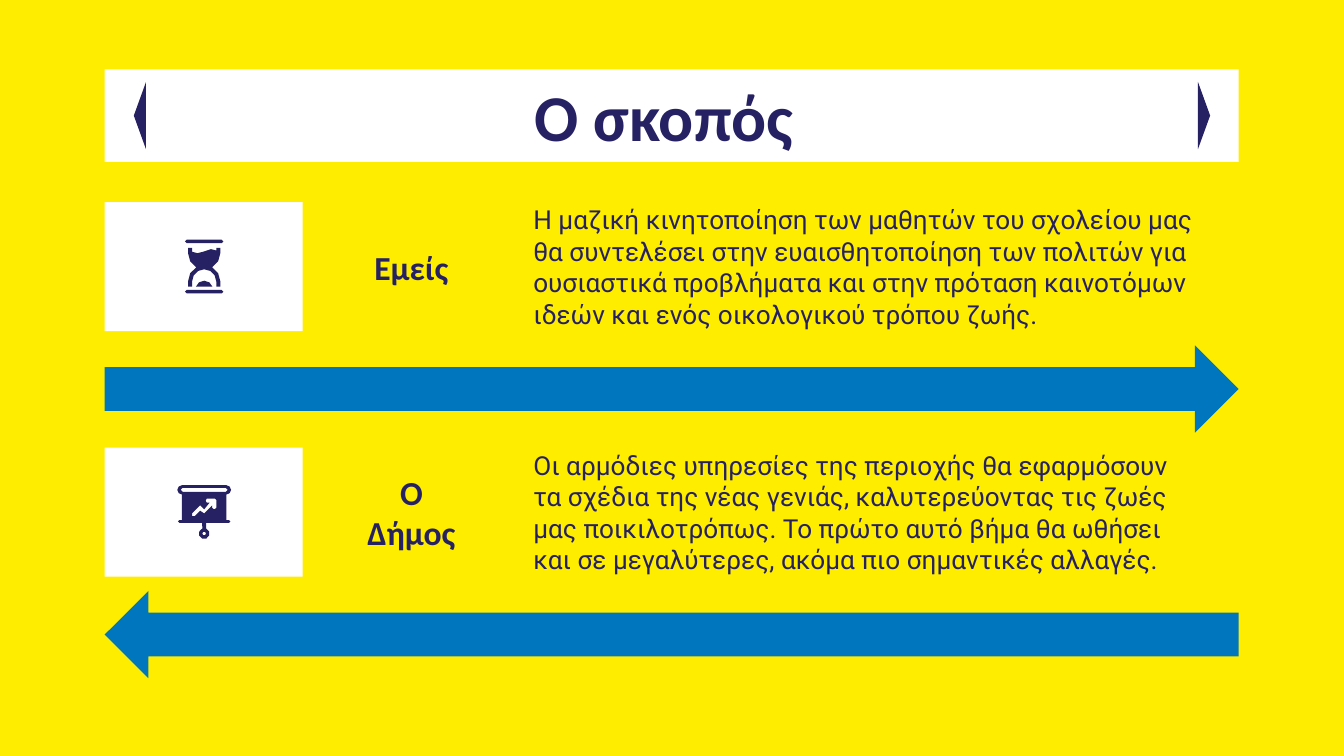
from math import cos, radians, sin

from pptx import Presentation
from pptx.dml.color import RGBColor
from pptx.enum import shapes as kinds, text as txt
from pptx.util import Cm, Pt

HUE = {"back": "FFED00", "ink": "262162", "card": "FFFFFF", "arrow": "0076BE"}
TITLE = "Ο σκοπός "
ROWS = [
    ("Εμείς",
     "Η μαζική κινητοποίηση των μαθητών του σχολείου μας θα συντελέσει στην "
     "ευαισθητοποίηση των πολιτών για ουσιαστικά προβλήματα και στην πρόταση "
     "καινοτόμων ιδεών και ενός οικολογικού τρόπου ζωής."),
    ("Ο Δήμος",
     "Οι αρμόδιες υπηρεσίες της περιοχής θα εφαρμόσουν τα σχέδια της νέας "
     "γενιάς, καλυτερεύοντας τις ζωές μας ποικιλοτρόπως. Το πρώτο αυτό βήμα "
     "θα ωθήσει και σε μεγαλύτερες, ακόμα πιο σημαντικές αλλαγές."),
]


def arc(x, y, r, start, end, steps=2):
    """Points along an arc; angles in degrees, clockwise from the right."""
    turns = [radians(start + (end - start) * i / steps) for i in range(steps + 1)]
    return [(x + r * cos(a), y + r * sin(a)) for a in turns]


def pill(x, y, r):
    """A bar with round ends centred at -x and x."""
    return arc(-x, y, r, 90, 270) + arc(x, y, r, 270, 450)


# Icon outlines, in hundredths of an inch around the icon's middle.
# Each icon is a list of parts; each part is a list of contours.
GLASS = (
    [(9, -14), (9, -12), (5, -13), (-1, -11), (-5, -10), (-9, -11),
     (-9, -14), (-12, -14)]
    + arc(0, -10, 12, 180, 120) + arc(0, 11, 12, 240, 180)
    + [(-12, 15), (-9, 15)] + arc(0, 11, 9, 180, 360, 6) + [(9, 15), (12, 15)]
    + arc(0, 11, 12, 360, 300) + arc(0, -10, 12, 60, 0) + [(12, -14)]
)
SAND = arc(0, 17, 6.5, 198, 342, 4)
BOARD = (
    arc(-16.5, -16.5, 3.5, 90, 270, 4) + arc(16.5, -16.5, 3.5, 270, 450, 4)
    + [(16.5, 6)] + arc(18.5, 7, 1, 270, 450) + [(1.5, 8)]
    + arc(0, 16, 4, -70, 250, 7) + [(-1.5, 8)]
    + arc(-18.5, 7, 1, 90, 270) + [(-16.5, 6)]
)
TREND = [(2, -10), (8, -10), (9, -9), (9, -3), (7.5, -2), (6, -3), (6, -5),
         (0, 1), (-3, -1), (-7, 3), (-9, 3), (-9, 1),
         (-3, -5), (0, -2), (4, -7), (2, -7), (1, -8.5)]
GLASS_ICON = [[SAND], [GLASS], [pill(13, 18.7, 1.3)], [pill(13, -18.7, 1.3)]]
BOARD_ICON = [[BOARD, pill(16, -16.5, 1.5), arc(0, 16, 1.4, 0, 300, 5), TREND]]

deck = Presentation()
deck.slide_width, deck.slide_height = Cm(25.4), Cm(14.29)
slide = deck.slides.add_slide(deck.slide_layouts[6])
slide.background.fill.solid()
slide.background.fill.fore_color.rgb = RGBColor.from_string(HUE["back"])


def paint(shape, hue):
    shape.shadow.inherit = False
    shape.fill.solid()
    shape.fill.fore_color.rgb = RGBColor.from_string(HUE[hue])
    shape.line.fill.background()


def block(kind, box, hue, turn=0):
    shape = slide.shapes.add_shape(kind, *map(Cm, box))
    shape.rotation = turn
    paint(shape, hue)
    return shape


def write(shape, words, size, font, bold=False, mid=True, after=0):
    frame = shape.text_frame
    frame.word_wrap = True
    frame.vertical_anchor = txt.MSO_ANCHOR.MIDDLE
    frame.margin_left = frame.margin_right = Cm(0.25)
    frame.margin_top = frame.margin_bottom = Cm(0.25)
    para = frame.paragraphs[0]
    para.alignment = txt.PP_ALIGN.CENTER if mid else txt.PP_ALIGN.LEFT
    para.space_after = Pt(after)
    run = para.add_run()
    run.text = words
    run.font.size, run.font.name, run.font.bold = Pt(size), font, bold
    run.font.color.rgb = RGBColor.from_string(HUE["ink"])


def draw(icon, x, y):
    home = slide.shapes.add_group_shape().shapes if len(icon) > 1 else slide.shapes
    for part in icon:
        pen = None
        for line in part:
            dots = [(px * 100, py * 100) for px, py in line]
            if pen is None:
                pen = home.build_freeform(*dots[0], scale=Cm(0.0254) / 100)
            else:
                pen.move_to(*dots[0])
            pen.add_line_segments(dots[1:], close=True)
        paint(pen.convert_to_shape(Cm(x), Cm(y)), "ink")


KIND = kinds.MSO_SHAPE
LEFT, WIDE = 1.98, 21.43
CARD_W, CARD_H = 3.74, 2.44
TOPS = [3.82 + 4.64 * i for i in range(len(ROWS))]


def tell(row, top):
    """The text and the label of one row."""
    name, words = row
    body = slide.shapes.add_textbox(Cm(9.83), Cm(top), Cm(12.98), Cm(CARD_H))
    write(body, words, 14, "Roboto", mid=False, after=16)
    label = slide.shapes.add_textbox(Cm(6.49), Cm(top + 0.19), Cm(2.57), Cm(2.06))
    write(label, name, 18, "Calibri", bold=True, after=12)


bar = block(KIND.RECTANGLE, (LEFT, 1.31, WIDE, 1.75), "card")
write(bar, TITLE, 35, "Calibri", bold=True)
for row, top in zip(ROWS, TOPS):
    tell(row, top)
for x, turn in ((22.12, 90), (2.01, 270)):
    block(KIND.ISOSCELES_TRIANGLE, (x, 2.07, 1.27, 0.23), "ink", turn)
for top in TOPS:
    block(KIND.RECTANGLE, (LEFT, top, CARD_W, CARD_H), "card")
for kind, top in zip((KIND.RIGHT_ARROW, KIND.LEFT_ARROW), TOPS):
    block(kind, (LEFT, top + 2.71, WIDE, 1.65), "arrow")
for icon, top in zip((BOARD_ICON, GLASS_ICON), reversed(TOPS)):
    draw(icon, LEFT + CARD_W / 2 + 0.01, top + CARD_H / 2)

deck.save("out.pptx")
